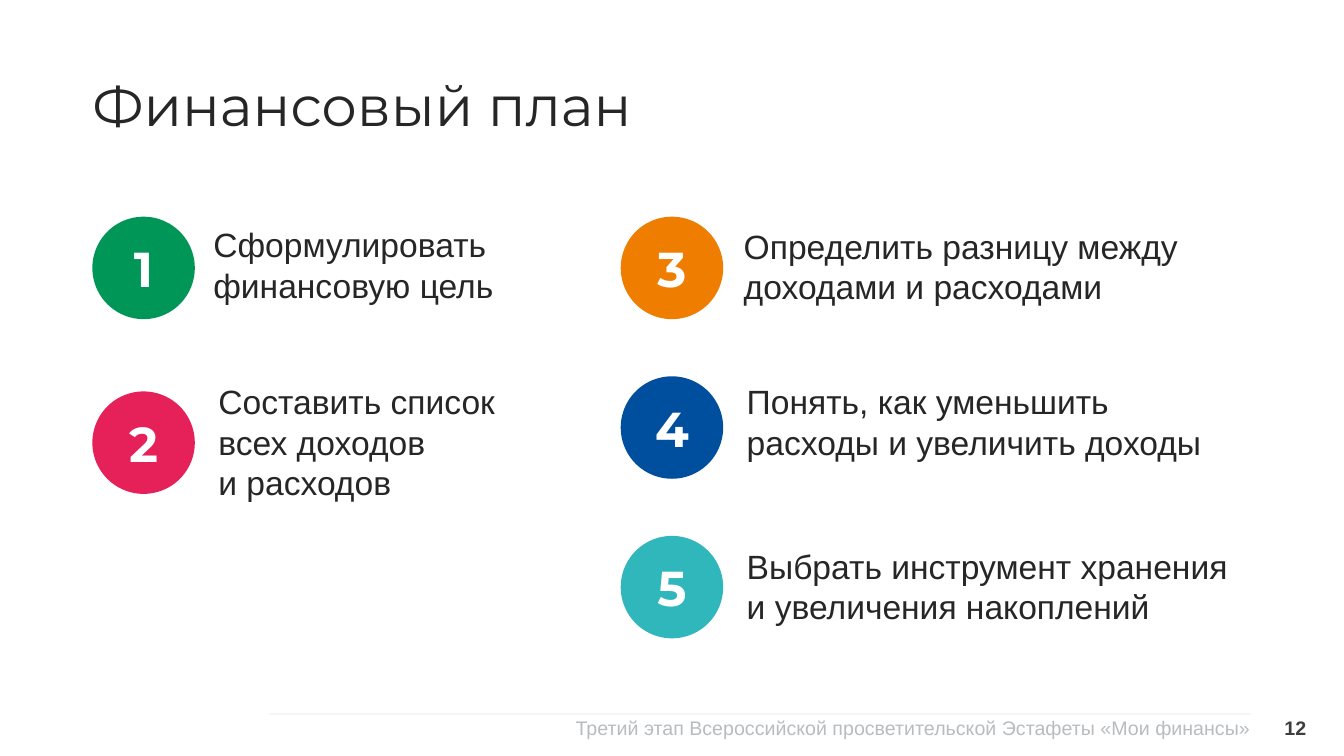
from dataclasses import dataclass
from typing import NamedTuple

from lxml.etree import SubElement
from pptx import Presentation
from pptx.dml.color import RGBColor as RGB
from pptx.enum.shapes import MSO_CONNECTOR as CONN, MSO_SHAPE as SHAPE
from pptx.enum.text import MSO_ANCHOR as ANCHOR, PP_ALIGN as ALIGN
from pptx.oxml.ns import qn
from pptx.util import Pt


@dataclass(frozen=True)
class Theme:
    ink: str = "262626"
    white: str = "FFFFFF"
    rule: str = "F5F5F5"
    footer: str = "B9BCBF"
    page: str = "3C3E3C"
    body_font: str = "Arial"
    display_font: str = "Montserrat"
    title_size: int = 40
    number_size: int = 35
    body_size: int = 24
    footer_size: int = 14


class Box(NamedTuple):
    x: float
    y: float
    w: float
    h: float


class Step(NamedTuple):
    number: int
    color: str
    text: str
    lines: int
    dx: float
    dy: float
    width: float


T = Theme()
COLS, ROWS = 160, 90
CELL = 76200
CIRCLE = 12.2
LINE = 4.85

LEFT_STEPS = [
    Step(1, "009657", "Сформулировать финансовую цель", 2, 14.4, 0.9, 40.5),
    Step(2, "E62059", "Составить список всех доходов \nи расходов", 3, 15, -1.2, 35.4),
]
RIGHT_STEPS = [
    Step(3, "EF7D00", "Определить разницу между доходами и расходами", 2, 14.64, 1.1, 56.3),
    Step(4, "004F9F", "Понять, как уменьшить расходы и увеличить доходы", 2, 15, 0.6, 56.5),
    Step(5, "30B7BC", "Выбрать инструмент хранения и увеличения накоплений", 2, 15, 1.2, 59.2),
]


def grid(*cells):
    return [round(c * CELL) for c in cells]


def write(sp, text, size=T.body_size, font=T.body_font, color=T.ink, bold=False,
          align=ALIGN.LEFT, anchor=ANCHOR.TOP, spacing=None):
    tf = sp.text_frame
    tf.word_wrap = True
    tf.margin_left = tf.margin_right = tf.margin_top = tf.margin_bottom = 0
    tf.vertical_anchor = anchor
    p = tf.paragraphs[0]
    p.text = text
    p.alignment = align
    if spacing:
        p.line_spacing = spacing
    for r in p.runs:
        r.font.size = Pt(size)
        r.font.name = font
        r.font.bold = bold
        r.font.color.rgb = RGB.from_string(color)


def add_text(s, box, text, **fmt):
    write(s.shapes.add_textbox(*grid(*box)), text, **fmt)


def add_title(s, box):
    add_text(s, box, "Финансовый план", size=T.title_size,
             font=T.display_font, spacing=0.9)


def add_badge(s, box, number, color):
    sp = s.shapes.add_shape(SHAPE.OVAL, *grid(*box))
    sp.shadow.inherit = False
    sp.fill.solid()
    sp.fill.fore_color.rgb = RGB.from_string(color)
    sp.line.fill.background()
    write(sp, str(number), size=T.number_size, font=T.display_font,
          color=T.white, bold=True, align=ALIGN.CENTER, anchor=ANCHOR.MIDDLE)


def add_steps(s, box, pitch, steps):
    for i, step in enumerate(steps):
        y = box.y + i * pitch
        add_badge(s, Box(box.x, y, CIRCLE, CIRCLE), step.number, step.color)
        add_text(s, Box(box.x + step.dx, y + step.dy, step.width, step.lines * LINE),
                 step.text)


def add_footer(s, box):
    page_w, text_w = 6.6, 87.9
    right = box.x + box.w - page_w
    rule = s.shapes.add_connector(CONN.STRAIGHT, *grid(box.x, box.y, right, box.y))
    rule.line.color.rgb = RGB.from_string(T.rule)
    rule.line.width = Pt(1)
    SubElement(rule.line._get_or_add_ln().getparent(), qn("a:effectLst"))
    top = box.y + 0.2
    add_text(s, Box(right - text_w, top, text_w, box.h),
             "Третий этап Всероссийской просветительской Эстафеты «Мои финансы»",
             size=T.footer_size, color=T.footer, align=ALIGN.RIGHT)
    add_text(s, Box(right, top, page_w, box.h), "12", size=T.footer_size,
             color=T.page, bold=True, align=ALIGN.RIGHT)


def main():
    prs = Presentation()
    prs.slide_width, prs.slide_height = grid(COLS, ROWS)
    s = prs.slides.add_slide(prs.slide_layouts[6])
    add_footer(s, Box(32, 85, 123.5, 4.8))
    add_title(s, Box(11, 9.24, 79.8, 8.3))
    add_steps(s, Box(11, 25.8, 55, 34), 20.8, LEFT_STEPS)
    add_steps(s, Box(73.9, 25.8, 75, 50.2), 19, RIGHT_STEPS)
    prs.save("out.pptx")


if __name__ == "__main__":
    main()
